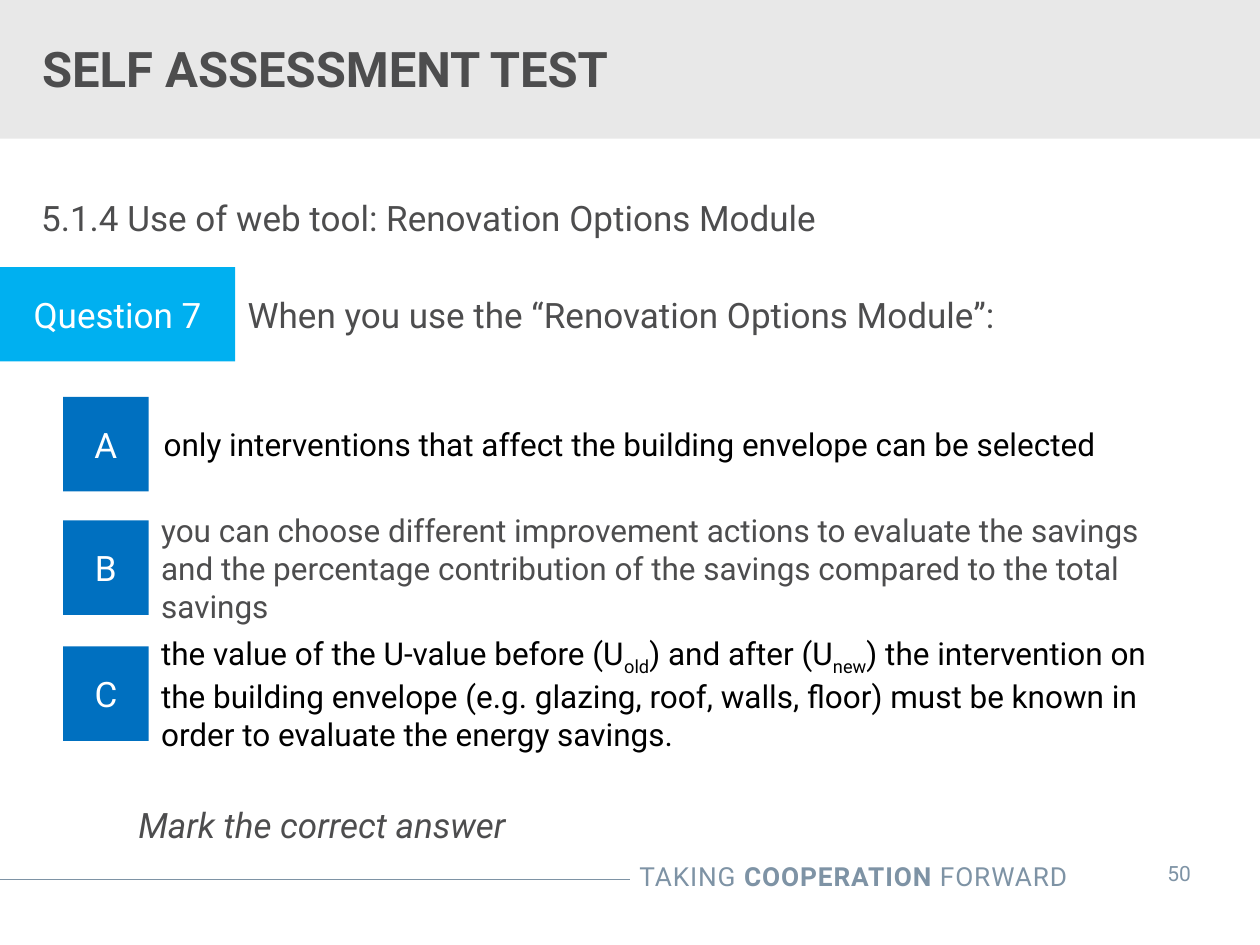
import pptx
import pptx.dml.color
import pptx.enum.shapes
import pptx.enum.text
import pptx.oxml.ns
import pptx.util
from lxml import etree

Pt = pptx.util.Pt
RGBColor = pptx.dml.color.RGBColor
ALIGN = pptx.enum.text.PP_ALIGN
ANCHOR = pptx.enum.text.MSO_ANCHOR

FONT = "Roboto"
WHITE = RGBColor(0xFF, 0xFF, 0xFF)
BLACK = RGBColor(0, 0, 0)
DARK_GREY = RGBColor(0x4D, 0x4D, 0x4E)
LIGHT_GREY = RGBColor(0xE8, 0xE8, 0xE8)
SLATE = RGBColor(0x7E, 0x93, 0xA5)
SKY = RGBColor(0x00, 0xB0, 0xF0)
BLUE = RGBColor(0x00, 0x70, 0xC0)

PAGE_WIDTH, PAGE_HEIGHT = 720, 540
TILE_HEIGHT = 54
# Each answer: letter, tile top, text left, colour, spans (text, is subscript)
ANSWERS = [
    ("A", 226.8, 86.4, BLACK,
     [("only interventions that affect the building envelope can be selected", False)]),
    ("B", 297.4, 85, DARK_GREY,
     [("you can choose different improvement actions to evaluate the savings and the "
       "percentage contribution of the savings compared to the total savings", False)]),
    ("C", 369.4, 85, BLACK,
     [("the value of the U-value before (U", False), ("old", True),
      (") and after (U", False), ("new", True),
      (") the intervention on the building envelope (e.g. glazing, roof, walls, floor) "
       "must be known in order to evaluate the energy savings.", False)]),
]


def write(shape, spans, size, color, align=ALIGN.LEFT, margin=7.2):
    """Fill a shape with one vertically centred paragraph; return it."""
    frame = shape.text_frame
    frame.word_wrap = True
    frame.vertical_anchor = ANCHOR.MIDDLE
    frame.margin_left = frame.margin_right = Pt(margin)
    para = frame.paragraphs[0]
    para.alignment = align
    para.font.name = FONT
    para.font.size = Pt(size)
    para.font.color.rgb = color
    for text in spans:
        para.add_run().text = text
    return para


def add_text(page, box, spans, size, color, **options):
    shape = page.shapes.add_textbox(*map(Pt, box))
    return write(shape, spans, size, color, **options)


def add_block(page, box, fill):
    block = page.shapes.add_shape(pptx.enum.shapes.MSO_SHAPE.RECTANGLE, *map(Pt, box))
    block.shadow.inherit = False
    block.fill.solid()
    block.fill.fore_color.rgb = fill
    block.line.fill.background()
    return block


def add_header(page, box):
    left, top, width, height = box
    add_block(page, box, LIGHT_GREY)
    title = add_text(page, (left + 24, top + 11.5, 495, 54),
                     ["SELF ASSESSMENT TEST"], 28, DARK_GREY, margin=0)
    title.font.bold = True


def add_question(page, box):
    left, top, width, height = box
    tile_width = 134.4
    tile = add_block(page, (left, top, tile_width, height), SKY)
    write(tile, ["Question 7"], 20, WHITE, align=ALIGN.CENTER)
    add_text(page, (left + tile_width, top, width - tile_width, height),
             ["When you use the “Renovation Options Module”:"], 20, DARK_GREY)


def add_answer(page, box, letter, text_left, color, spans):
    left, top, width, height = box
    tile = add_block(page, (left, top, 49, height), BLUE)
    write(tile, [letter], 20, WHITE, align=ALIGN.CENTER)
    para = add_text(page, (text_left, top, width, height),
                    [text for text, _ in spans], 18, color)
    for run, (_, subscript) in zip(para.runs, spans):
        if subscript:
            run._r.get_or_add_rPr().set("baseline", "-25000")


def add_footer(page, box):
    left, top, width, height = box
    # Rule
    rule_y = top + 18
    rule = page.shapes.add_connector(pptx.enum.shapes.MSO_CONNECTOR.STRAIGHT,
                                     Pt(left), Pt(rule_y), Pt(left + width / 2), Pt(rule_y))
    rule.line.color.rgb = SLATE
    rule.line.width = Pt(0.75)
    etree.SubElement(rule._element.spPr, pptx.oxml.ns.qn("a:effectLst"))
    # Slogan
    slogan = add_text(page, (left + 279, top + 3.5, 338, 25),
                      ["TAKING ", "COOPERATION", " FORWARD"], 15, SLATE, align=ALIGN.RIGHT)
    slogan.runs[1].font.bold = True
    for run in slogan.runs:
        run._r.get_or_add_rPr().set("spc", "50")
    # Page number
    add_text(page, (left + 647, top, 53.5, 29), ["50"], 12, SLATE, align=ALIGN.CENTER)


def main():
    deck = pptx.Presentation()
    deck.slide_width, deck.slide_height = Pt(PAGE_WIDTH), Pt(PAGE_HEIGHT)
    page = deck.slides.add_slide(deck.slide_layouts[6])

    add_footer(page, (0, 484.5, PAGE_WIDTH, 36))
    add_header(page, (0, 0, PAGE_WIDTH, 79.2))
    # Section heading and instruction
    add_text(page, (23.5, 111, 674, 26),
             ["5.1.4 Use of web tool: Renovation Options Module"], 20, DARK_GREY, margin=0)
    hint = add_text(page, (79, 458, 400, 26),
                    ["Mark the correct answer"], 20, DARK_GREY, margin=0)
    hint.font.italic = True
    # Question and its answers
    add_question(page, (0, 152.6, PAGE_WIDTH, TILE_HEIGHT))
    for letter, top, text_left, color, spans in ANSWERS:
        add_answer(page, (36, top, 587, TILE_HEIGHT), letter, text_left, color, spans)

    deck.save("out.pptx")


if __name__ == "__main__":
    main()
